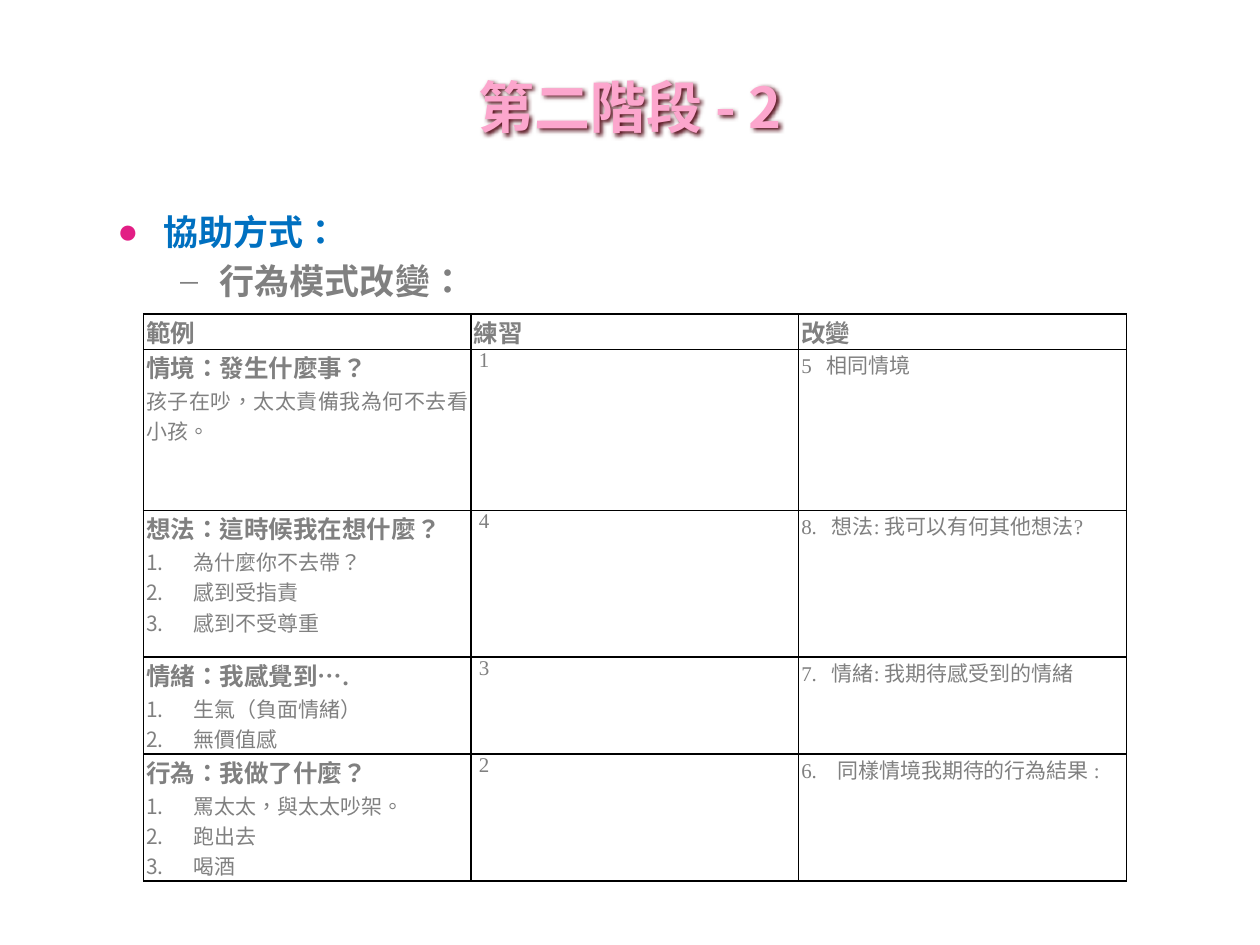
from dataclasses import dataclass

from lxml.etree import SubElement
from pptx import Presentation
from pptx.dml.color import RGBColor
from pptx.enum.text import MSO_ANCHOR, PP_ALIGN
from pptx.oxml.ns import qn
from pptx.util import Pt


@dataclass(frozen=True)
class Theme:
    pink: str = "FCA6CD"
    shadow: str = "5A1420"
    blue: str = "0070C0"
    gray: str = "808080"
    bullet: str = "E21E85"
    border: str = "000000"
    title_size: int = 32
    body_size: int = 20
    head_size: int = 14
    text_size: int = 12
    title_font: str = "Noto Sans CJK JP"
    cjk_font: str = "Noto Sans CJK SC"
    latin_font: str = "Times New Roman"


class Deck:
    """Holds the theme and the current slide and adds elements to it."""

    def __init__(self, prs, theme):
        self.theme = theme
        self.s = prs.slides.add_slide(prs.slide_layouts[6])

    def run(self, p, text, size, color, font, bold=False):
        r = p.add_run()
        r.text = text
        r.font.size = Pt(size)
        r.font.bold = bold
        r.font.color.rgb = RGBColor.from_string(color)
        r.font.name = font
        rpr = r._r.get_or_add_rPr()
        rpr.set("lang", "zh-TW")
        east = self.theme.cjk_font if font == self.theme.latin_font else font
        SubElement(rpr, qn("a:ea"), typeface=east)

    def indent(self, p, left, first=0):
        ppr = p._p.get_or_add_pPr()
        ppr.set("marL", str(Pt(left)))
        ppr.set("indent", str(Pt(first)))
        return ppr

    def bullet(self, p, left, hang, color, char=None):
        t = self.theme
        ppr = self.indent(p, left, -hang)
        clr = SubElement(ppr, qn("a:buClr"))
        SubElement(clr, qn("a:srgbClr"), val=color)
        font = t.latin_font if char else t.cjk_font
        SubElement(ppr, qn("a:buFont"), typeface=font)
        if char:
            SubElement(ppr, qn("a:buChar"), char=char)
        else:
            SubElement(ppr, qn("a:buAutoNum"), type="arabicPeriod")

    def tab(self, p, pos):
        tabs = SubElement(p._p.get_or_add_pPr(), qn("a:tabLst"))
        SubElement(tabs, qn("a:tab"), pos=str(Pt(pos)), algn="l")

    def textbox(self, x, y, w, h):
        sp = self.s.shapes.add_textbox(Pt(x), Pt(y), Pt(w), Pt(h))
        sp.text_frame.word_wrap = True
        return sp

    def title(self, text, *box):
        t = self.theme
        sp = self.textbox(*box)
        effects = SubElement(sp._element.spPr, qn("a:effectLst"))
        shadow = SubElement(effects, qn("a:outerShdw"), blurRad=str(Pt(0.2)),
                            dist=str(Pt(1.2)), dir="2700000", algn="tl")
        SubElement(shadow, qn("a:srgbClr"), val=t.shadow)
        tf = sp.text_frame
        tf.vertical_anchor = MSO_ANCHOR.MIDDLE
        p = tf.paragraphs[0]
        p.alignment = PP_ALIGN.CENTER
        self.run(p, text, t.title_size, t.pink, t.title_font, True)

    def outline(self, items, *box):
        t = self.theme
        tf = self.textbox(*box).text_frame
        for i, (text, color, left, hang, char, mark) in enumerate(items):
            p = tf.add_paragraph() if i else tf.paragraphs[0]
            p.line_spacing = 0.83
            if i:
                p.level = 1
                p.space_before = Pt(8)
            self.bullet(p, left, hang, mark, char)
            self.run(p, text, t.body_size, color, t.cjk_font, True)

    def border(self, cell):
        tcpr = cell._tc.get_or_add_tcPr()
        for side in ("lnL", "lnR", "lnT", "lnB"):
            ln = SubElement(tcpr, qn(f"a:{side}"), w=str(Pt(1)))
            fill = SubElement(ln, qn("a:solidFill"))
            SubElement(fill, qn("a:srgbClr"), val=self.theme.border)

    def cell(self, cell, paragraphs):
        t = self.theme
        cell.margin_left = cell.margin_right = Pt(1.5)
        cell.margin_top = cell.margin_bottom = 0
        self.border(cell)
        cell.fill.background()
        tf = cell.text_frame
        for i, (kind, text, pos) in enumerate(paragraphs):
            p = tf.add_paragraph() if i else tf.paragraphs[0]
            p.alignment = PP_ALIGN.JUSTIFY
            if kind == "number":
                self.bullet(p, 27, 27, t.gray)
            elif kind == "tabbed":
                self.tab(p, pos)
            elif kind == "indented":
                self.indent(p, pos)
            head = kind == "head"
            size = t.head_size if head else t.text_size
            self.run(p, text, size, t.gray, t.latin_font, head)

    def table(self, rows, heights, x, y, w):
        cols = len(rows[0])
        shape = self.s.shapes.add_table(len(rows), cols, Pt(x), Pt(y),
                                        Pt(w), Pt(sum(heights)))
        tbl = shape.table
        tbl.first_row = tbl.horz_banding = False
        for col in tbl.columns:
            col.width = Pt(w / cols)
        for r, (row, height) in enumerate(zip(rows, heights)):
            tbl.rows[r].height = Pt(height)
            for c, paragraphs in enumerate(row):
                self.cell(tbl.cell(r, c), paragraphs)


def head(text):
    return ("head", text, 0)


def example(title, *items, kind="number"):
    return [head(title)] + [(kind, item, 0) for item in items]


def step(title, items, practice, change, pos, kind="number"):
    return [example(title, *items, kind=kind),
            [("indented", practice, 3)],
            [("tabbed", change, pos)]]


def main():
    prs = Presentation()
    prs.slide_width, prs.slide_height = Pt(720), Pt(540)
    theme = Theme()
    deck = Deck(prs, theme)
    deck.outline([
        ("協助方式：", theme.blue, 26.5, 26.5, "●", theme.bullet),
        ("行為模式改變：", theme.gray, 58.5, 22.5, "–", theme.gray),
    ], 60, 120.7, 607, 60)
    rows = [
        [[head(text)] for text in ("範例", "練習", "改變")],
        step("情境：發生什麼事？", ["孩子在吵，太太責備我為何不去看小孩。"],
             "1", "5\t相同情境", 14.5, kind="plain"),
        step("想法：這時候我在想什麼？",
             ["為什麼你不去帶？", "感到受指責", "感到不受尊重"],
             "4", "8.\t想法: 我可以有何其他想法?", 17.5),
        step("情緒：我感覺到….", ["生氣（負面情緒）", "無價值感"],
             "3", "7.\t情緒: 我期待感受到的情緒", 17.5),
        step("行為：我做了什麼？", ["罵太太，與太太吵架。", "跑出去", "喝酒"],
             "2", "6.\t同樣情境我期待的行為結果 :", 20.5),
    ]
    deck.table(rows, [20.3, 92, 84, 55.3, 72.7], 82, 179.3, 561.6)
    deck.title("第二階段 - 2", 36, 21.5, 648, 78)
    prs.save("out.pptx")


if __name__ == "__main__":
    main()
